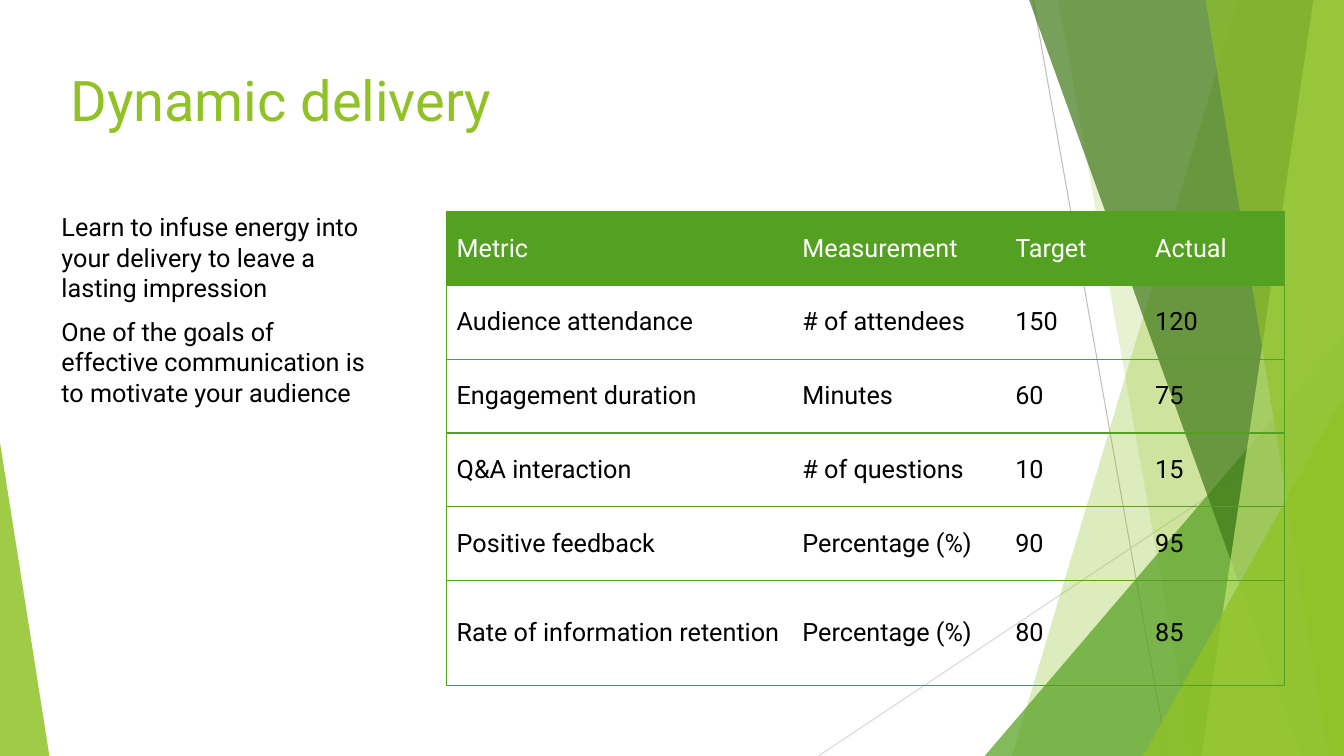
from lxml import etree
from pptx import Presentation
from pptx.dml.color import RGBColor
from pptx.enum.shapes import MSO_CONNECTOR, MSO_SHAPE
from pptx.enum.text import MSO_ANCHOR
from pptx.oxml.ns import qn
from pptx.util import Pt

STRAIGHT = MSO_CONNECTOR.STRAIGHT
TRIANGLE = MSO_SHAPE.ISOSCELES_TRIANGLE
TOP, MIDDLE = MSO_ANCHOR.TOP, MSO_ANCHOR.MIDDLE

FONT = "Roboto"
COLORS = {
    "lime": "90C226",
    "green": "54A021",
    "forest": "3F7819",
    "pale": "C0E474",
    "gray": "BFBFBF",
    "light_gray": "D9D9D9",
    "black": "000000",
    "white": "FFFFFF",
}
WIDTH, HEIGHT = 960, 540


def add_text(paragraph, text, size, color):
    run = paragraph.add_run()
    run.text = text
    run.font.name = FONT
    run.font.size = Pt(size)
    run.font.color.rgb = RGBColor.from_string(COLORS[color])


def add_text_box(box, margins, paragraphs, size, color, space_before=0):
    """Add a wrapped, top-anchored text box; margins run left, top, right, bottom."""
    frame = slide.shapes.add_textbox(*map(Pt, box)).text_frame
    frame.word_wrap = True
    frame.vertical_anchor = TOP
    frame.margin_left, frame.margin_top, frame.margin_right, frame.margin_bottom = map(Pt, margins)
    for index, text in enumerate(paragraphs):
        paragraph = frame.add_paragraph() if index else frame.paragraphs[0]
        paragraph.space_before = Pt(space_before)
        add_text(paragraph, text, size, color)


presentation = Presentation()
presentation.slide_width, presentation.slide_height = Pt(WIDTH), Pt(HEIGHT)
slide = presentation.slides.add_slide(presentation.slide_layouts[6])

# Thin lines behind the facets
for start_x, start_y, end_x, end_y, color in [
    (738, 0, 834, HEIGHT, "gray"),
    (WIDTH, 290, 584.6, HEIGHT, "light_gray"),
]:
    line = slide.shapes.add_connector(STRAIGHT, Pt(start_x), Pt(start_y), Pt(end_x), Pt(end_y))
    line.line.color.rgb = RGBColor.from_string(COLORS[color])
    line.line.width = Pt(0.75)
    etree.SubElement(line._element.spPr, qn("a:effectLst"))

# Bands: x of the slanted edge at the top and bottom of the slide.
# Triangles: left, top, width, height, position of the tip.
facets = [
    ("band", (884.2, 722.9), "lime", 30),
    ("band", (756, 851.8), "lime", 20),
    ("triangle", (703.4, 239.8, 256.6, 300.2, 1), "green", 72),
    ("band", (735.1, 929.5), "forest", 70),
    ("band", (938.2, 858.2), "pale", 70),
    ("band", (861.1, 949), "lime", 65),
    ("triangle", (816.5, 283, 143.5, 257, 1), "lime", 80),
    ("triangle", (0, 316.1, 35.3, 223.9, 0), "lime", 85),
]
for kind, geometry, color, opacity in facets:
    if kind == "band":
        top_x, bottom_x = geometry
        builder = slide.shapes.build_freeform(Pt(top_x), 0)
        corners = [(WIDTH, 0), (WIDTH, HEIGHT), (bottom_x, HEIGHT)]
        builder.add_line_segments([(Pt(x), Pt(y)) for x, y in corners], close=True)
        facet = builder.convert_to_shape()
    else:
        *box, tip = geometry
        facet = slide.shapes.add_shape(TRIANGLE, *map(Pt, box))
        facet.adjustments[0] = tip
    facet.shadow.inherit = False
    facet.line.fill.background()
    facet.fill.solid()
    facet.fill.fore_color.rgb = RGBColor.from_string(COLORS[color])
    color_element = facet._element.spPr.find(qn("a:solidFill"))[0]
    etree.SubElement(color_element, qn("a:alpha"), val=str(opacity * 1000))

add_text_box((43.2, 43.2, 873.4, 97.2), (7.2, 3.6, 7.2, 3.6), ["Dynamic delivery"], 40, "lime")
add_text_box(
    (43.9, 151.2, 229.7, 338.4),
    (0, 0, 7.2, 3.6),
    [
        "Learn to infuse energy into your delivery to leave a lasting impression",
        "One of the goals of effective communication is to motivate your audience",
    ],
    18,
    "black",
    space_before=10,
)

metrics = [
    ("Metric", "Measurement", "Target", "Actual"),
    ("Audience attendance", "# of attendees", "150", "120"),
    ("Engagement duration", "Minutes", "60", "75"),
    ("Q&A interaction", "# of questions", "10", "15"),
    ("Positive feedback", "Percentage (%)", "90", "95"),
    ("Rate of information retention", "Percentage (%)", "80", "85"),
]
column_widths = [247, 152, 100, 99.4]
row_heights = [52.7] * 5 + [74.9]
table = slide.shapes.add_table(
    len(metrics), len(column_widths),
    Pt(319), Pt(151.2), Pt(sum(column_widths)), Pt(sum(row_heights)),
).table
table.first_row = table.horz_banding = False
for column, width in zip(table.columns, column_widths):
    column.width = Pt(width)
for row, height in zip(table.rows, row_heights):
    row.height = Pt(height)

for row_index, values in enumerate(metrics):
    is_header = row_index == 0
    for column_index, value in enumerate(values):
        cell = table.cell(row_index, column_index)
        cell.vertical_anchor = MIDDLE
        add_text(cell.text_frame.paragraphs[0], value, 18, "white" if is_header else "black")

        # Rules run between rows and around the table, not between columns
        visible = {
            "a:lnL": column_index == 0,
            "a:lnR": column_index == len(values) - 1,
            "a:lnT": True,
            "a:lnB": True,
        }
        properties = cell._tc.get_or_add_tcPr()
        for side, shown in visible.items():
            border = etree.SubElement(properties, qn(side), w=str(Pt(1)))
            fill = etree.SubElement(border, qn("a:solidFill" if shown else "a:noFill"))
            if shown:
                etree.SubElement(fill, qn("a:srgbClr"), val=COLORS["green"])

        if is_header:
            cell.fill.solid()
            cell.fill.fore_color.rgb = RGBColor.from_string(COLORS["green"])
        else:
            cell.fill.background()

presentation.save("out.pptx")
